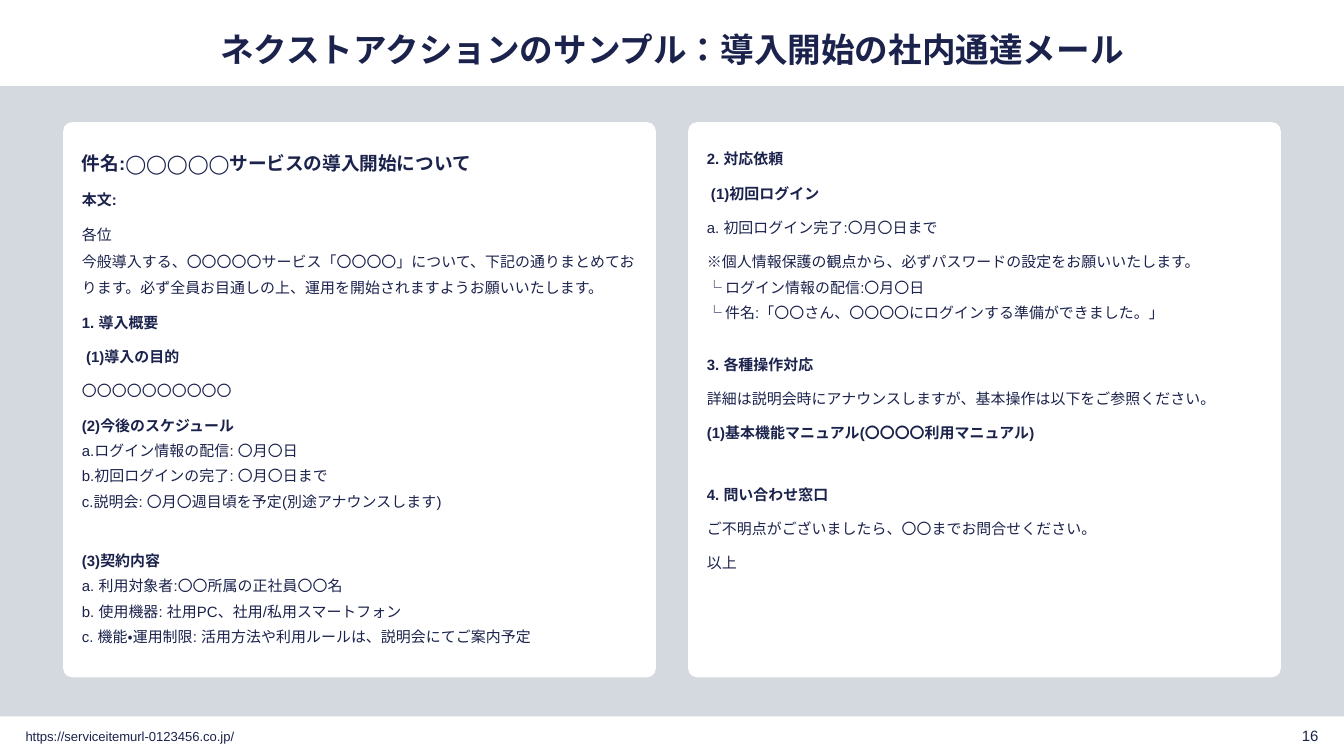
from pptx import Presentation
from pptx.dml.color import RGBColor
from pptx.enum.lang import MSO_LANGUAGE_ID as Lang
from pptx.enum.shapes import MSO_SHAPE as Shape
from pptx.enum.text import MSO_ANCHOR as Anchor, PP_ALIGN as Align
from pptx.util import Inches, Pt

NAVY = RGBColor(0x1B, 0x22, 0x4C)
GRAY = RGBColor(0xD4, 0xD9, 0xDF)
WHITE = RGBColor(0xFF, 0xFF, 0xFF)
FONT = "Arial"

SUBJECT = dict(size=10, bold=True, spacing=1.5, before=0)
HEAD = dict(bold=True, spacing=1.5)
BODY = dict(spacing=1.5)
ITEM = dict()

MAIL_LEFT = [
    ("件名:◯◯◯◯◯サービスの導入開始について", SUBJECT),
    ("本文:", HEAD),
    ("各位\n今般導入する、〇〇〇〇〇サービス「〇〇〇〇」について、下記の通りまとめております。"
     "必ず全員お目通しの上、運用を開始されますようお願いいたします。", BODY),
    ("1. 導入概要", HEAD),
    (" (1)導入の目的", HEAD),
    ("〇〇〇〇〇〇〇〇〇〇", BODY),
    ("(2)今後のスケジュール", HEAD),
    ("a.ログイン情報の配信: 〇月〇日", ITEM),
    ("b.初回ログインの完了: 〇月〇日まで", ITEM),
    ("c.説明会: 〇月〇週目頃を予定(別途アナウンスします)", ITEM),
    ("(3)契約内容", HEAD | dict(before=17.5)),
    ("a. 利用対象者:〇〇所属の正社員〇〇名", ITEM),
    ("b. 使用機器: 社用PC、社用/私用スマートフォン", ITEM),
    ("c. 機能・運用制限: 活用方法や利用ルールは、説明会にてご案内予定", ITEM),
]
MAIL_RIGHT = [
    ("2. 対応依頼", HEAD | dict(before=0)),
    (" (1)初回ログイン", HEAD),
    ("a. 初回ログイン完了:〇月〇日まで", BODY),
    ("※個人情報保護の観点から、必ずパスワードの設定をお願いいたします。", BODY),
    ("└ ログイン情報の配信:〇月〇日", ITEM),
    ("└ 件名:「〇〇さん、〇〇〇〇にログインする準備ができました。」", ITEM),
    ("3. 各種操作対応", HEAD | dict(before=13.5)),
    ("詳細は説明会時にアナウンスしますが、基本操作は以下をご参照ください。", BODY),
    ("(1)基本機能マニュアル(〇〇〇〇利用マニュアル)", HEAD),
    ("4. 問い合わせ窓口", HEAD | dict(before=18.5)),
    ("ご不明点がございましたら、〇〇までお問合せください。", BODY),
    ("以上", BODY),
]


def write(p, text, size=8, bold=False, align=Align.LEFT, spacing=1.0, before=4):
    """Fill a paragraph; a newline in the text becomes a line break."""
    p.alignment = align
    p.line_spacing = spacing
    p.space_before = Pt(before)
    for i, line in enumerate(text.split("\n")):
        if i:
            p.add_line_break()
        r = p.add_run()
        r.text = line
        r.font.name = FONT
        r.font.size = Pt(size)
        r.font.bold = bold
        r.font.color.rgb = NAVY
        r.font.language_id = Lang.JAPANESE


def prepare_frame(tf, margin, anchor):
    tf.word_wrap = True
    tf.vertical_anchor = anchor
    tf.margin_left = tf.margin_right = Inches(margin)
    tf.margin_top = tf.margin_bottom = Inches(margin)


def add_label(s, text, x, y, w, h, **fmt):
    sp = s.shapes.add_textbox(Inches(x), Inches(y), Inches(w), Inches(h))
    prepare_frame(sp.text_frame, 0.04, Anchor.MIDDLE)
    write(sp.text_frame.paragraphs[0], text, before=0, **fmt)


def add_block(s, kind, x, y, w, h, color):
    sp = s.shapes.add_shape(kind, Inches(x), Inches(y), Inches(w), Inches(h))
    sp.shadow.inherit = False
    sp.fill.solid()
    sp.fill.fore_color.rgb = color
    sp.line.fill.background()
    return sp


def add_card(s, x, lines):
    sp = add_block(s, Shape.ROUNDED_RECTANGLE, x, 0.91, 4.41, 4.13, WHITE)
    sp.adjustments[0] = 0.016
    tf = sp.text_frame
    prepare_frame(tf, 0.12, Anchor.TOP)
    for i, (text, style) in enumerate(lines):
        p = tf.add_paragraph() if i else tf.paragraphs[0]
        write(p, text, **style)


def main():
    prs = Presentation()
    prs.slide_width = Inches(10)
    prs.slide_height = Inches(10 * 9 / 16)
    s = prs.slides.add_slide(prs.slide_layouts[6])

    add_label(s, "16", 9.46, 5.37, 0.39, 0.2, align=Align.RIGHT)
    add_label(s, "ネクストアクションのサンプル：導入開始の社内通達メール",
              0.47, 0.17, 9.06, 0.39, size=18, bold=True, align=Align.CENTER)
    add_label(s, "https://serviceitemurl-0123456.co.jp/", 0.15, 5.38, 3.54, 0.2, size=7)

    add_block(s, Shape.RECTANGLE, 0, 0.64, 10, 4.69, GRAY)
    add_card(s, 0.47, MAIL_LEFT)
    add_card(s, 5.12, MAIL_RIGHT)
    prs.save("out.pptx")


if __name__ == "__main__":
    main()
